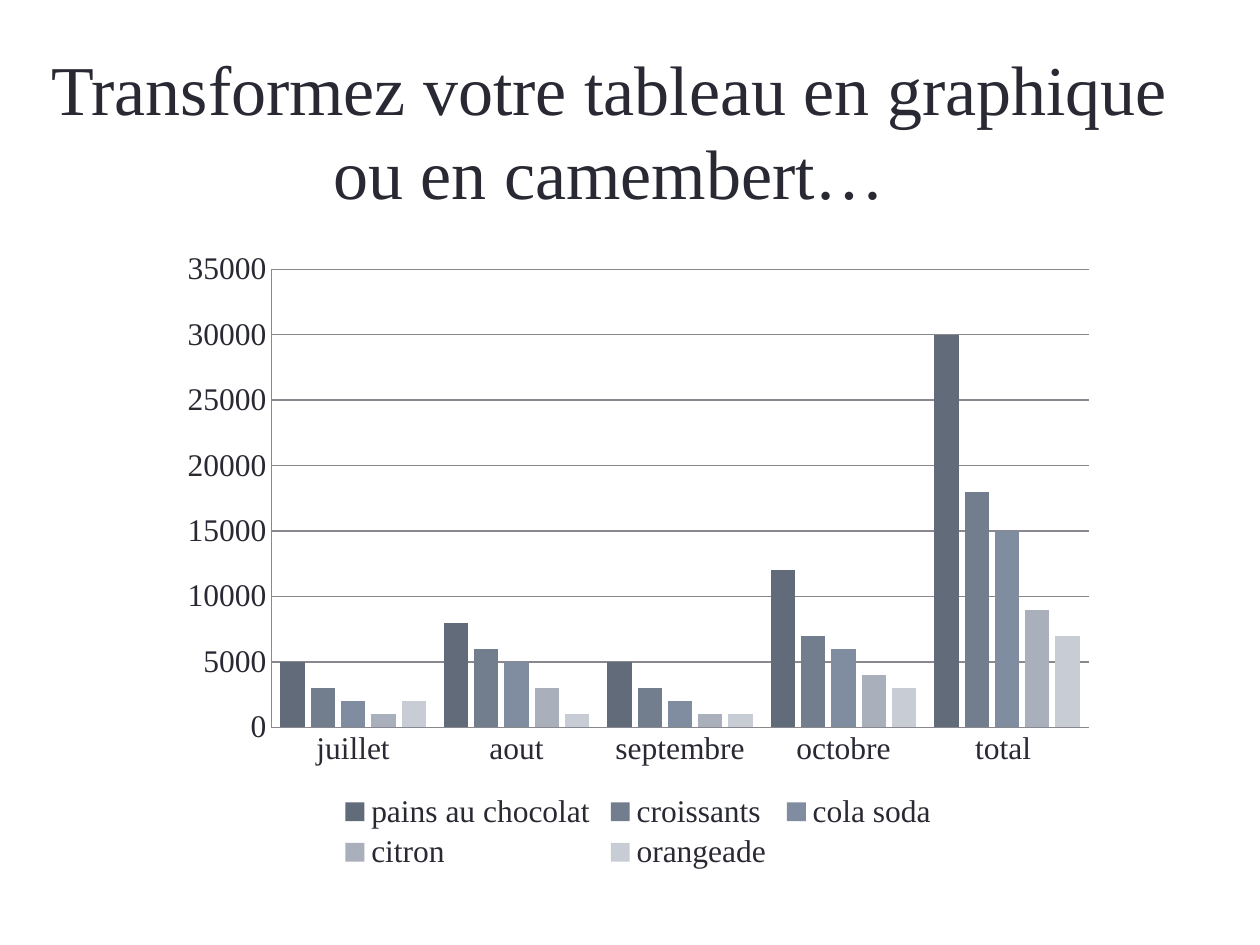
from typing import NamedTuple

from pptx import Presentation
from pptx.chart.data import CategoryChartData
from pptx.dml.color import RGBColor
from pptx.enum.chart import XL_CHART_TYPE, XL_LEGEND_POSITION, XL_TICK_MARK
from pptx.enum.text import MSO_ANCHOR, PP_ALIGN
from pptx.util import Inches, Pt

COLUMNS = XL_CHART_TYPE.COLUMN_CLUSTERED
BOTTOM = XL_LEGEND_POSITION.BOTTOM
NO_TICK = XL_TICK_MARK.NONE
MIDDLE = MSO_ANCHOR.MIDDLE
CENTER = PP_ALIGN.CENTER

FONT = "Times New Roman"
INK = "292934"
RULE = "88888E"


class Product(NamedTuple):
    name: str
    sales: tuple[int, ...]
    color: str


PERIODS = ("juillet", "aout", "septembre", "octobre", "total ")
PRODUCTS = (
    Product("pains au chocolat", (5000, 8000, 5000, 12000, 30000), "626B7A"),
    Product("croissants", (3000, 6000, 3000, 7000, 18000), "727D8E"),
    Product("cola soda", (2000, 5000, 2000, 6000, 15000), "808DA0"),
    Product("citron", (1000, 3000, 1000, 4000, 9000), "A9AFBB"),
    Product("orangeade", (2000, 1000, 1000, 3000, 7000), "C8CCD4"),
)


def rgb(color: str) -> RGBColor:
    return RGBColor.from_string(color)


def style_font(font, size: int) -> None:
    font.name = FONT
    font.size = Pt(size)
    font.bold = False
    font.color.rgb = rgb(INK)


def style_line(line) -> None:
    line.color.rgb = rgb(RULE)
    line.width = Pt(0.75)


def add_title(slide, text: str) -> None:
    box = slide.shapes.add_textbox(Inches(0.29), Inches(0.55), Inches(9.09), Inches(0.95))
    frame = box.text_frame
    frame.word_wrap = True
    frame.vertical_anchor = MIDDLE
    frame.margin_left = frame.margin_right = 0
    frame.text = text
    heading = frame.paragraphs[0]
    heading.alignment = CENTER
    for run in heading.runs:
        style_font(run.font, 40)


def add_sales_chart(slide, products: tuple[Product, ...]) -> None:
    """Draw one column per product for each period."""
    sales = CategoryChartData(number_format="General")
    sales.categories = PERIODS
    for product in products:
        sales.add_series(product.name, product.sales)

    chart = slide.shapes.add_chart(
        COLUMNS, Inches(1.34), Inches(1.9), Inches(7.45), Inches(5.05), sales
    ).chart
    style_font(chart.font, 18)
    chart.has_title = False
    chart.has_legend = True
    chart.legend.position = BOTTOM
    chart.legend.include_in_layout = False

    columns = chart.plots[0]
    columns.gap_width = 75
    columns.overlap = -25
    columns.vary_by_categories = False
    for series, product in zip(columns.series, products):
        series.format.fill.solid()
        series.format.fill.fore_color.rgb = rgb(product.color)

    for axis in (chart.category_axis, chart.value_axis):
        axis.major_tick_mark = axis.minor_tick_mark = NO_TICK
        style_line(axis.format.line)
    amounts = chart.value_axis
    amounts.minimum_scale = 0
    amounts.maximum_scale = 35000
    amounts.major_unit = 5000
    amounts.has_major_gridlines = True
    style_line(amounts.major_gridlines.format.line)


def main() -> None:
    deck = Presentation()
    deck.slide_width = Inches(10)
    deck.slide_height = Inches(7.5)
    slide = deck.slides.add_slide(deck.slide_layouts[6])
    add_title(slide, "Transformez votre tableau en graphique\vou en camembert…")
    add_sales_chart(slide, PRODUCTS)
    deck.save("out.pptx")


if __name__ == "__main__":
    main()
